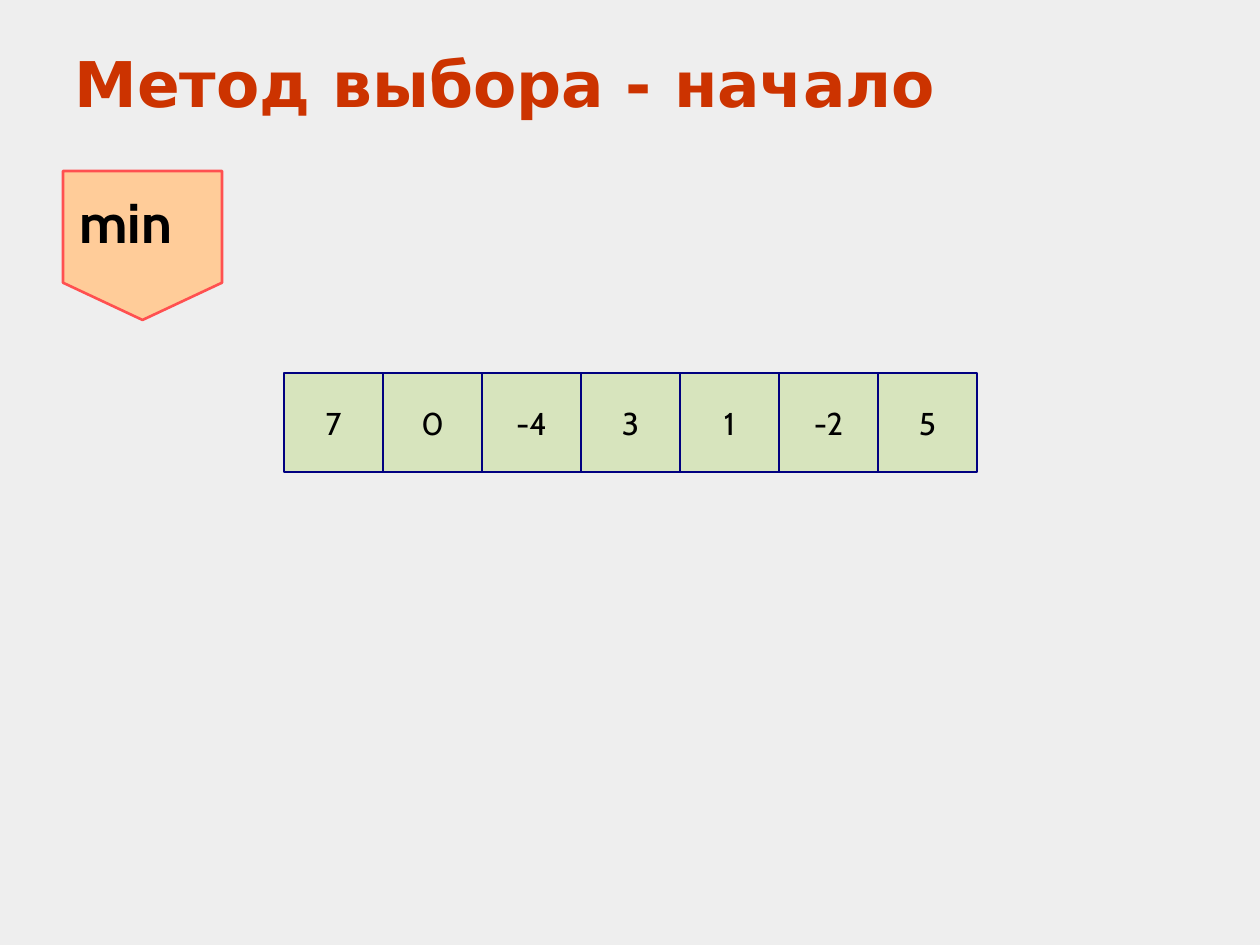
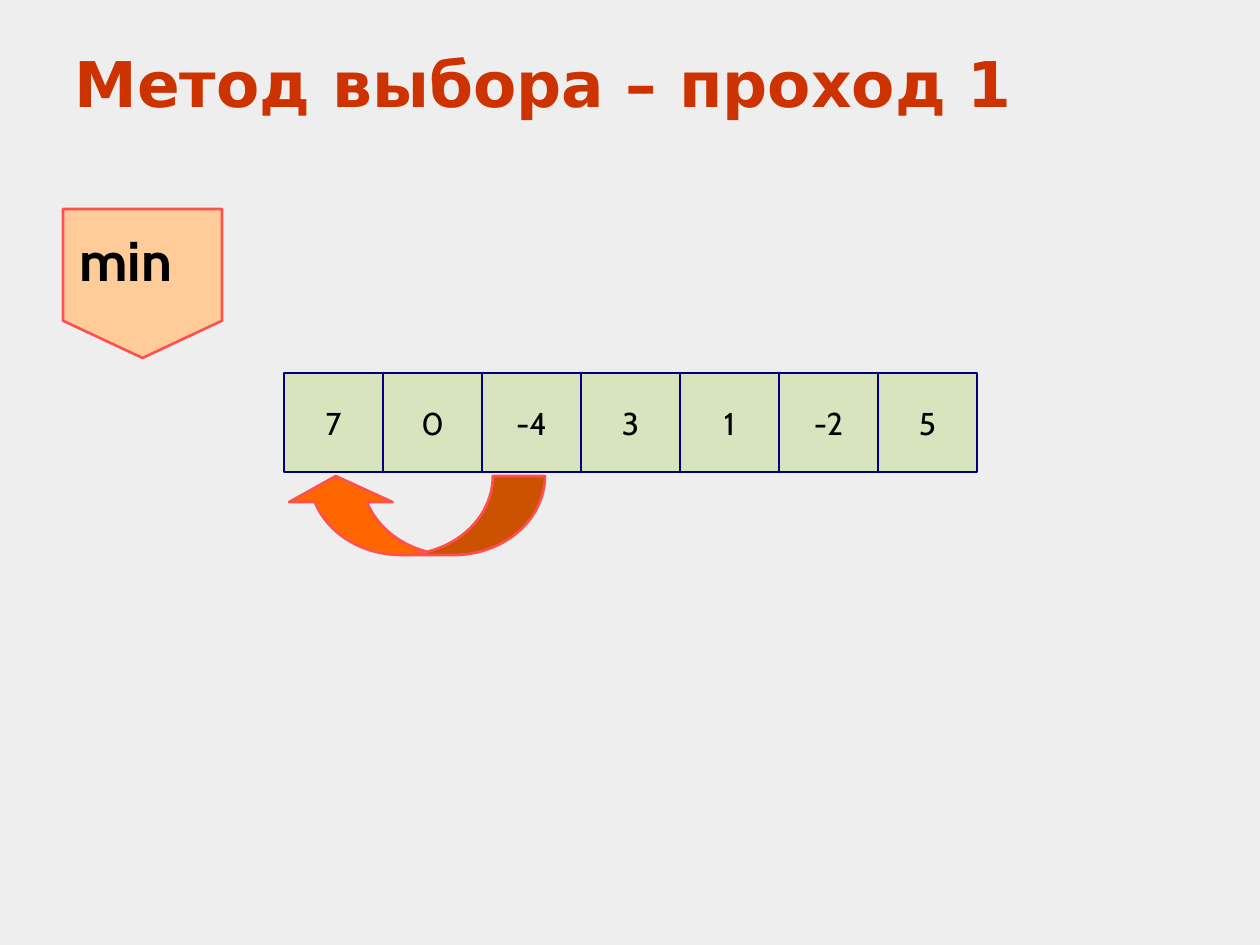
"""Build two slides on the start of selection sort."""
from dataclasses import dataclass

from pptx import Presentation
from pptx import util as u
from pptx.dml.color import RGBColor
from pptx.enum import shapes, text


@dataclass(frozen=True)
class Theme:
    background: str = "EEEEEE"
    title: str = "CC3300"
    ink: str = "000000"
    cell: str = "D7E4BD"
    cell_line: str = "000080"
    tag: str = "FFCC99"
    arrow: str = "FF6600"
    accent_line: str = "FF5050"
    title_font: str = "DejaVu Sans"
    body_font: str = "Cabin"
    title_size: int = 36
    tag_size: int = 32
    cell_size: int = 18
    line_width: float = 1.5


theme = Theme()
PX = u.Inches(1) / 126
VALUES = ["7", "0", "-4", "3", "1", "-2", "5"]
CELL_LEFT, CELL_TOP, CELL_SIDE = 284, 373, 99
TAG_INSET = 16
SLIDES = [("Метод выбора - начало", 166, False),
          ("Метод выбора – проход 1", 204, True)]


def add_box(parent, kind, box, fill, line):
    s = parent.add_shape(kind, *(round(n * PX) for n in box))
    s.shadow.inherit = False
    s.fill.solid()
    s.fill.fore_color.rgb = RGBColor.from_string(fill)
    s.line.color.rgb = RGBColor.from_string(line)
    s.line.width = u.Pt(theme.line_width)
    return s


def write(tf, words, font, size, color, align, bold=False):
    p = tf.paragraphs[0]
    p.text = words
    p.alignment = align
    p.font.name = font
    p.font.size = u.Pt(size)
    p.font.bold = bold
    p.font.color.rgb = RGBColor.from_string(color)


prs = Presentation()
prs.slide_width, prs.slide_height = round(1260 * PX), round(945 * PX)
fill = prs.slide_master.background.fill
fill.solid()
fill.fore_color.rgb = RGBColor.from_string(theme.background)

for heading, tag_top, swapped in SLIDES:
    slide = prs.slides.add_slide(prs.slide_layouts[5])

    title = slide.shapes.title
    title.left, title.top, title.width, title.height = (
        round(n * PX) for n in (62, 37, 1134, 89))
    tf = title.text_frame
    tf.vertical_anchor = text.MSO_ANCHOR.BOTTOM
    tf.auto_size = text.MSO_AUTO_SIZE.NONE
    write(tf, heading, theme.title_font, theme.title_size, theme.title,
          text.PP_ALIGN.LEFT, bold=True)

    row = slide.shapes.add_group_shape()
    for i, value in enumerate(VALUES):
        box = (CELL_LEFT + i * CELL_SIDE, CELL_TOP, CELL_SIDE, CELL_SIDE)
        cell = add_box(row.shapes, shapes.MSO_SHAPE.RECTANGLE, box,
                       theme.cell, theme.cell_line)
        tf = cell.text_frame
        tf.word_wrap = False
        tf.vertical_anchor = text.MSO_ANCHOR.MIDDLE
        write(tf, value, theme.body_font, theme.cell_size, theme.ink,
              text.PP_ALIGN.CENTER)

    tag = add_box(slide.shapes, shapes.MSO_SHAPE.PENTAGON,
                  (68, tag_top, 149, 159), theme.tag, theme.accent_line)
    tag.rotation = 90
    tag.adjustments[0] = 0.25
    tf = tag.text_frame
    tf.word_wrap = True
    tf.vertical_anchor = text.MSO_ANCHOR.TOP
    tf.margin_left = tf.margin_right = round(TAG_INSET * PX)
    tf.margin_top = tf.margin_bottom = round(TAG_INSET * PX)
    tag.element.txBody.bodyPr.set("vert", "vert270")
    write(tf, "min", theme.body_font, theme.tag_size, theme.ink,
          text.PP_ALIGN.LEFT, bold=True)

    if swapped:
        arrow = add_box(slide.shapes, shapes.MSO_SHAPE.CURVED_UP_ARROW,
                        (284, 476, 261, 79), theme.arrow, theme.accent_line)
        arrow.element.spPr.get_or_add_xfrm().set("flipH", "1")
        for i, value in enumerate((0.66, 1.31, 0.33)):
            arrow.adjustments[i] = value

prs.save("out.pptx")
